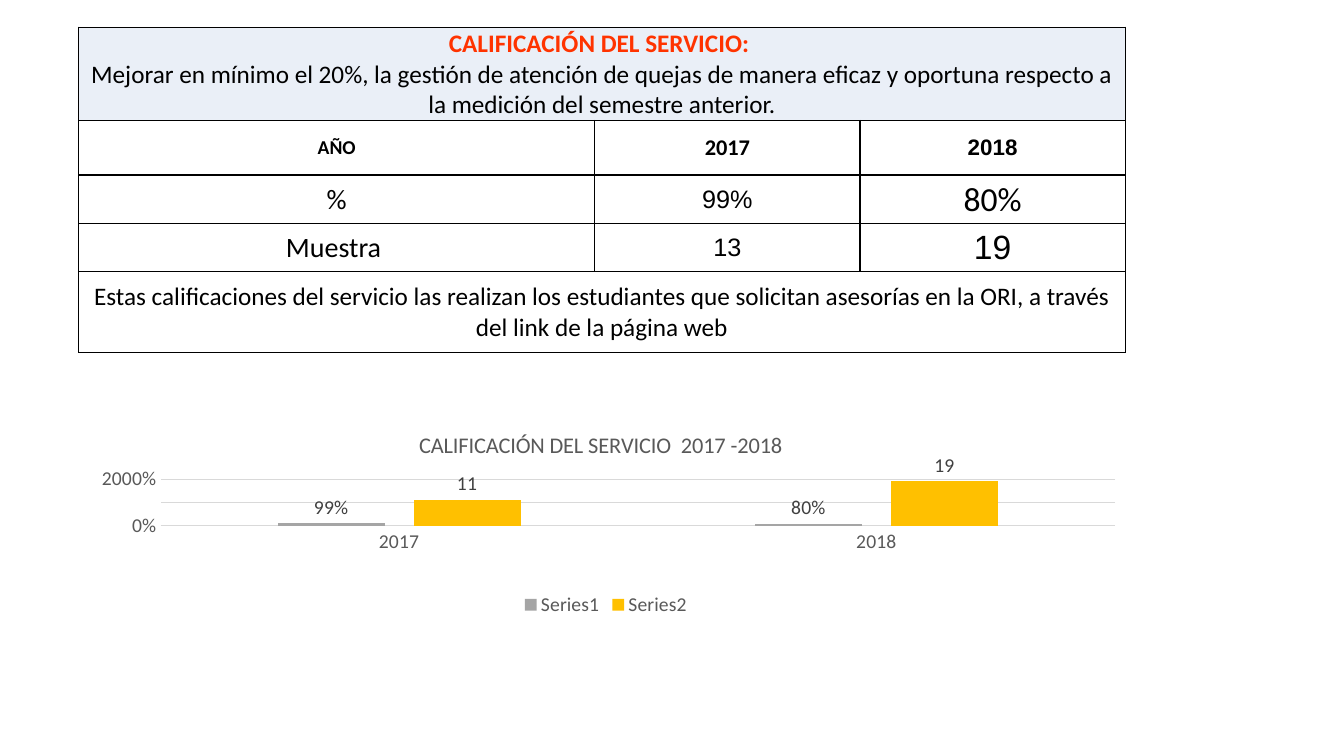
from lxml import etree
from pptx import Presentation
from pptx.chart.data import CategoryChartData
from pptx.dml.color import RGBColor
from pptx.enum.chart import XL_CHART_TYPE, XL_LABEL_POSITION, XL_LEGEND_POSITION, XL_TICK_MARK
from pptx.enum.text import MSO_ANCHOR, PP_ALIGN
from pptx.oxml.ns import qn
from pptx.util import Inches, Pt

COLUMNS = XL_CHART_TYPE.COLUMN_CLUSTERED
OUTSIDE = XL_LABEL_POSITION.OUTSIDE_END
BOTTOM = XL_LEGEND_POSITION.BOTTOM
NO_TICK = XL_TICK_MARK.NONE
MIDDLE = MSO_ANCHOR.MIDDLE
CENTER = PP_ALIGN.CENTER

COLORS = {
    "ink": "000000", "heading": "FF3300", "band": "EAEFF7", "paper": "FFFFFF",
    "axis": "595959", "label": "404040", "grid": "D9D9D9",
    "percent": "A5A5A5", "sample": "FFC000",
}


def rgb(name):
    return RGBColor.from_string(COLORS[name])


class ReportSlide:
    """Current slide and its style; lengths are percentages of the slide."""

    def __init__(self, deck):
        self.deck = deck
        self.slide = deck.slides.add_slide(deck.slide_layouts[6])

    def x(self, share):
        return round(self.deck.slide_width * share / 100)

    def y(self, share):
        return round(self.deck.slide_height * share / 100)

    def style(self, font, size, color="ink", name="Calibri", bold=False):
        values = {"size": Pt(size), "name": name, "bold": bold}
        for attribute, value in values.items():
            setattr(font, attribute, value)
        font.color.rgb = rgb(color)

    def border(self, cell):
        properties = cell._tc.get_or_add_tcPr()
        for position, side in enumerate(("lnL", "lnR", "lnT", "lnB")):
            line = etree.Element(qn(f"a:{side}"), w=str(Pt(1)))
            fill = etree.SubElement(line, qn("a:solidFill"))
            etree.SubElement(fill, qn("a:srgbClr"), val=COLORS["ink"])
            properties.insert(position, line)

    def cell(self, cell, paragraphs, fill):
        inset = Inches(0.01)
        layout = {"vertical_anchor": MIDDLE, "margin_left": inset, "margin_right": inset,
                  "margin_top": inset, "margin_bottom": 0}
        for attribute, value in layout.items():
            setattr(cell, attribute, value)
        cell.fill.solid()
        cell.fill.fore_color.rgb = rgb(fill)
        self.border(cell)
        frame = cell.text_frame
        for index, (text, look) in enumerate(paragraphs):
            paragraph = frame.add_paragraph() if index else frame.paragraphs[0]
            paragraph.alignment = CENTER
            run = paragraph.add_run()
            run.text = text
            self.style(run.font, **look)

    def table(self, left, top, widths, heights, rows):
        table = self.slide.shapes.add_table(
            len(heights), len(widths), self.x(left), self.y(top),
            self.x(sum(widths)), self.y(sum(heights))).table
        table.first_row = table.horz_banding = False
        for column, width in zip(table.columns, widths):
            column.width = self.x(width)
        for index, (height, (fill, entries)) in enumerate(zip(heights, rows)):
            table.rows[index].height = self.y(height)
            if len(entries) == 1:
                table.cell(index, 0).merge(table.cell(index, len(widths) - 1))
            for column in range(len(widths)):
                paragraphs = entries[column] if column < len(entries) else []
                self.cell(table.cell(index, column), paragraphs, fill)

    def place(self, element, before, **shares):
        """Give a chart part a fixed place, in shares of the chart."""
        for old in element.findall(qn("c:layout")):
            element.remove(old)
        layout = etree.Element(qn("c:layout"))
        manual = etree.SubElement(layout, qn("c:manualLayout"))
        if "w" in shares:
            etree.SubElement(manual, qn("c:layoutTarget"), val="inner")
        for axis in "xy":
            etree.SubElement(manual, qn(f"c:{axis}Mode"), val="edge")
        for key, share in shares.items():
            etree.SubElement(manual, qn(f"c:{key}"), val=str(share))
        element.find(qn(before)).addprevious(layout)

    def chart(self, left, top, width, height, title, years, series):
        data = CategoryChartData()
        data.categories = years
        for name, values, number_format, _ in series:
            data.add_series(name, values, number_format)
        chart = self.slide.shapes.add_chart(
            COLUMNS, self.x(left), self.y(top), self.x(width), self.y(height), data).chart
        self.style(chart.font, 14)

        # Title and legend
        heading = chart.chart_title.text_frame.paragraphs[0].add_run()
        heading.text = title
        self.style(heading.font, 16, "axis")
        self.place(chart.chart_title._element, "c:overlay", x=0.32, y=0.08)
        chart.has_legend = True
        chart.legend.position = BOTTOM
        chart.legend.include_in_layout = False
        self.style(chart.legend.font, 14, "axis")

        # Axes
        scale = {"minimum_scale": 0, "maximum_scale": 20, "major_unit": 10}
        for attribute, value in scale.items():
            setattr(chart.value_axis, attribute, value)
        for axis in (chart.category_axis, chart.value_axis):
            axis.major_tick_mark = axis.minor_tick_mark = NO_TICK
            self.style(axis.tick_labels.font, 14, "axis")
        chart.value_axis.tick_labels.number_format = "0%"
        chart.value_axis.tick_labels.number_format_is_linked = False
        chart.value_axis.format.line.fill.background()
        for part in (chart.category_axis, chart.value_axis.major_gridlines):
            part.format.line.color.rgb = rgb("grid")
            part.format.line.width = Pt(0.75)

        # Columns and their labels
        plot = chart.plots[0]
        plot.gap_width, plot.overlap, plot.vary_by_categories = 219, -27, False
        self.place(chart._chartSpace.chart.plotArea, "c:barChart", x=0.08, y=0.33, w=0.9, h=0.22)
        for bars, (_, _, number_format, color) in zip(plot.series, series):
            bars.format.fill.solid()
            bars.format.fill.fore_color.rgb = rgb(color)
            labels = bars.data_labels
            formats = {"show_value": True, "position": OUTSIDE,
                       "number_format": number_format, "number_format_is_linked": False}
            for attribute, value in formats.items():
                setattr(labels, attribute, value)
            self.style(labels.font, 14, "label")


def entry(text, size, **look):
    return text, {"size": size, **look}


def main():
    deck = Presentation()
    deck.slide_width, deck.slide_height = Inches(13.33), Inches(7.5)
    report = ReportSlide(deck)

    # Service rating table
    goal = [
        entry("CALIFICACIÓN DEL SERVICIO: ", 18, color="heading", bold=True),
        entry("Mejorar en mínimo el 20%, la gestión de atención de quejas de manera eficaz "
              "y oportuna respecto a la medición del semestre anterior.", 18),
    ]
    source_note = [entry("Estas calificaciones del servicio las realizan los estudiantes que "
                         "solicitan asesorías en la ORI, a través del link de la página web", 18)]
    rows = [
        ("band", [goal]),
        ("paper", [[entry("AÑO", 14, bold=True)], [entry("2017", 16, bold=True)],
                   [entry("2018", 16, name="Arial", bold=True)]]),
        ("paper", [[entry("%", 20)], [entry("99%", 18, name="Arial")], [entry("80%", 24)]]),
        ("paper", [[entry("Muestra ", 20)], [entry("13", 18, name="Arial")],
                   [entry("19", 24, name="Arial")]]),
        ("paper", [source_note]),
    ]
    report.table(5.85, 3.6, [38.41, 19.73, 19.73], [10.13, 7.2, 6.4, 6.4, 10.67], rows)

    # Comparison chart
    report.chart(5.63, 54.13, 78.92, 28, "CALIFICACIÓN DEL SERVICIO  2017 -2018",
                 ["2017", "2018"],
                 [("Series1", (0.99, 0.8), "0%", "percent"),
                  ("Series2", (11, 19), "General", "sample")])

    deck.save("out.pptx")


if __name__ == "__main__":
    main()
